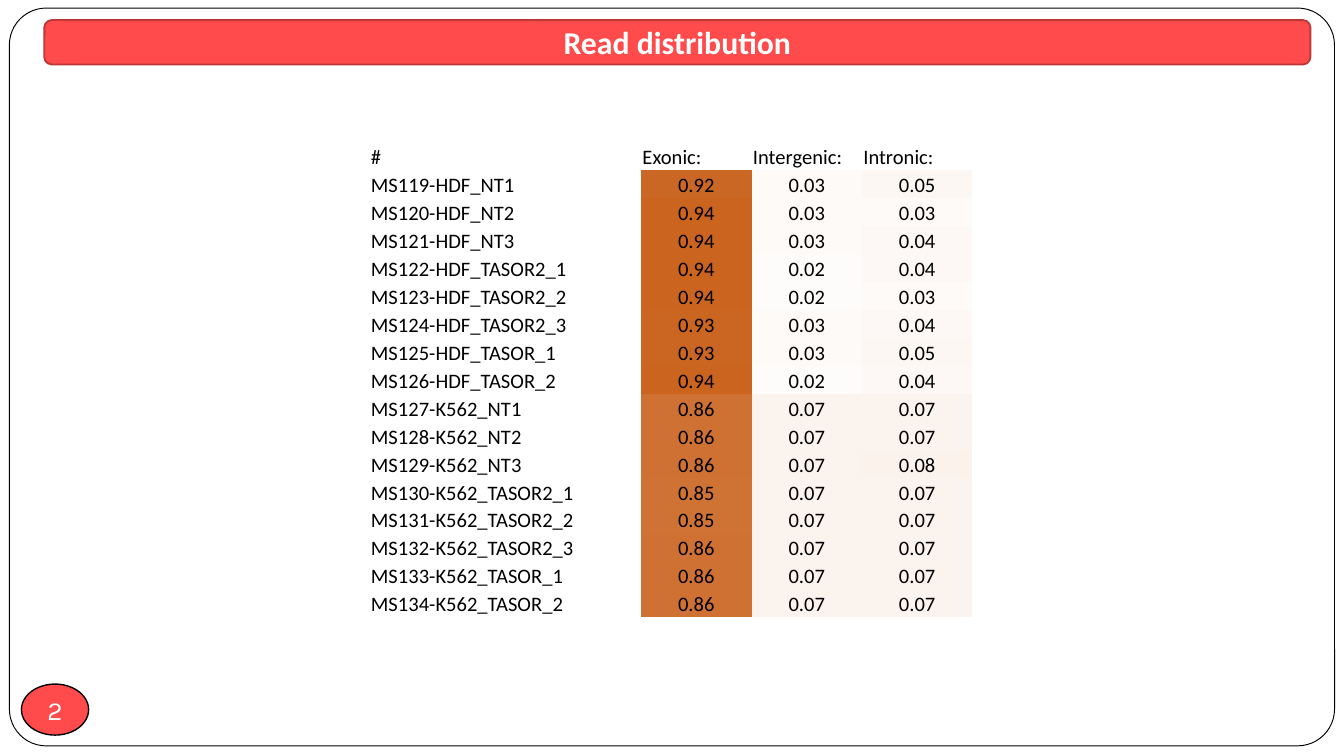
from pptx import Presentation
from pptx.dml.color import RGBColor
from pptx.enum import shapes, text
from pptx.util import Inches, Pt

WIDE = 10
HIGH = WIDE * 9 / 16
HUES = {"white": "FFFFFF", "black": "000000", "red": "FF4B4B",
        "edge": "BD3737", "peak": "C75A11"}
NO_GRID = "{2D5ABB26-0587-4C30-8999-92F81FD0307C}"
FORM = shapes.MSO_SHAPE

HEADS = ["#", "Exonic:", "Intergenic:", "Intronic:"]
FIRST = 119
READS = [
    ("HDF_NT1", 0.92, 0.03, 0.05),
    ("HDF_NT2", 0.94, 0.03, 0.03),
    ("HDF_NT3", 0.94, 0.03, 0.04),
    ("HDF_TASOR2_1", 0.94, 0.02, 0.04),
    ("HDF_TASOR2_2", 0.94, 0.02, 0.03),
    ("HDF_TASOR2_3", 0.93, 0.03, 0.04),
    ("HDF_TASOR_1", 0.93, 0.03, 0.05),
    ("HDF_TASOR_2", 0.94, 0.02, 0.04),
    ("K562_NT1", 0.86, 0.07, 0.07),
    ("K562_NT2", 0.86, 0.07, 0.07),
    ("K562_NT3", 0.86, 0.07, 0.08),
    ("K562_TASOR2_1", 0.85, 0.07, 0.07),
    ("K562_TASOR2_2", 0.85, 0.07, 0.07),
    ("K562_TASOR2_3", 0.86, 0.07, 0.07),
    ("K562_TASOR_1", 0.86, 0.07, 0.07),
    ("K562_TASOR_2", 0.86, 0.07, 0.07),
]


def hue(name):
    return RGBColor.from_string(HUES[name])


def heat(share):
    """Blend white into the peak colour by the share of reads."""
    return RGBColor(*(round(255 - (255 - part) * share) for part in hue("peak")))


def style(para, font, size, tint, align, bold=False):
    para.alignment = align
    for run in para.runs:
        run.font.name, run.font.size, run.font.bold = font, Pt(size), bold
        run.font.color.rgb = hue(tint)


def panel(slide, form, box, fill, line, width):
    part = slide.shapes.add_shape(form, *map(Inches, box))
    part.shadow.inherit = False
    part.fill.solid()
    part.fill.fore_color.rgb = hue(fill)
    part.line.color.rgb = hue(line)
    part.line.width = Pt(width)
    return part


def frame(slide, box):
    part = panel(slide, FORM.ROUNDED_RECTANGLE, box, "white", "black", 0.5)
    part.adjustments[0] = 0.05


def badge(slide, box, label):
    body = panel(slide, FORM.OVAL, box, "red", "black", 0.75).text_frame
    body.text = label
    body.word_wrap = False
    body.vertical_anchor = text.MSO_ANCHOR.MIDDLE
    body.margin_left = body.margin_right = body.margin_top = body.margin_bottom = 0
    style(body.paragraphs[0], "Karla", 14, "white", text.PP_ALIGN.CENTER)


def banner(slide, box, label):
    part = panel(slide, FORM.ROUNDED_RECTANGLE, box, "red", "edge", 1)
    body = part.text_frame
    body.text = label
    body.vertical_anchor = text.MSO_ANCHOR.MIDDLE
    style(body.paragraphs[0], "Calibri", 17, "white", text.PP_ALIGN.CENTER, True)


def put(cell, label, share=None):
    """Write one cell, shaded when it holds a share."""
    cell.text = label
    cell.vertical_anchor = text.MSO_ANCHOR.BOTTOM
    cell.margin_left = cell.margin_right = cell.margin_top = Inches(0.01)
    cell.margin_bottom = 0
    if share is None:
        cell.fill.background()
        align = text.PP_ALIGN.LEFT
    else:
        cell.fill.solid()
        cell.fill.fore_color.rgb = heat(share)
        align = text.PP_ALIGN.CENTER
    style(cell.text_frame.paragraphs[0], "Calibri", 11, "black", align)


def heatmap(slide, box):
    left, top, wide, high = box
    count = len(READS) + 1
    grid = slide.shapes.add_table(count, len(HEADS), *map(Inches, box)).table
    grid.first_row = grid.horz_banding = False
    grid._tbl.tblPr[0].text = NO_GRID
    for col, part in zip(grid.columns, (0.45, 0.183, 0.183, 0.183)):
        col.width = Inches(wide * part)
    for row in grid.rows:
        row.height = Inches(high / count)
    for col, head in enumerate(HEADS):
        put(grid.cell(0, col), head)
    for row, (name, *shares) in enumerate(READS, 1):
        put(grid.cell(row, 0), f"MS{FIRST + row - 1}-{name}")
        for col, share in enumerate(shares, 1):
            put(grid.cell(row, col), f"{share:.2f}", share)


def main():
    deck = Presentation()
    deck.slide_width, deck.slide_height = Inches(WIDE), Inches(HIGH)
    slide = deck.slides.add_slide(deck.slide_layouts[6])
    frame(slide, (0.07, 0.06, WIDE - 0.14, 5.49))
    badge(slide, (0.16, 5.09, 0.5, 0.38), "2")
    banner(slide, (0.33, 0.15, 9.42, 0.33), "Read distribution")
    heatmap(slide, (2.75, 1.06, 4.49, 3.54))
    deck.save("out.pptx")


if __name__ == "__main__":
    main()
